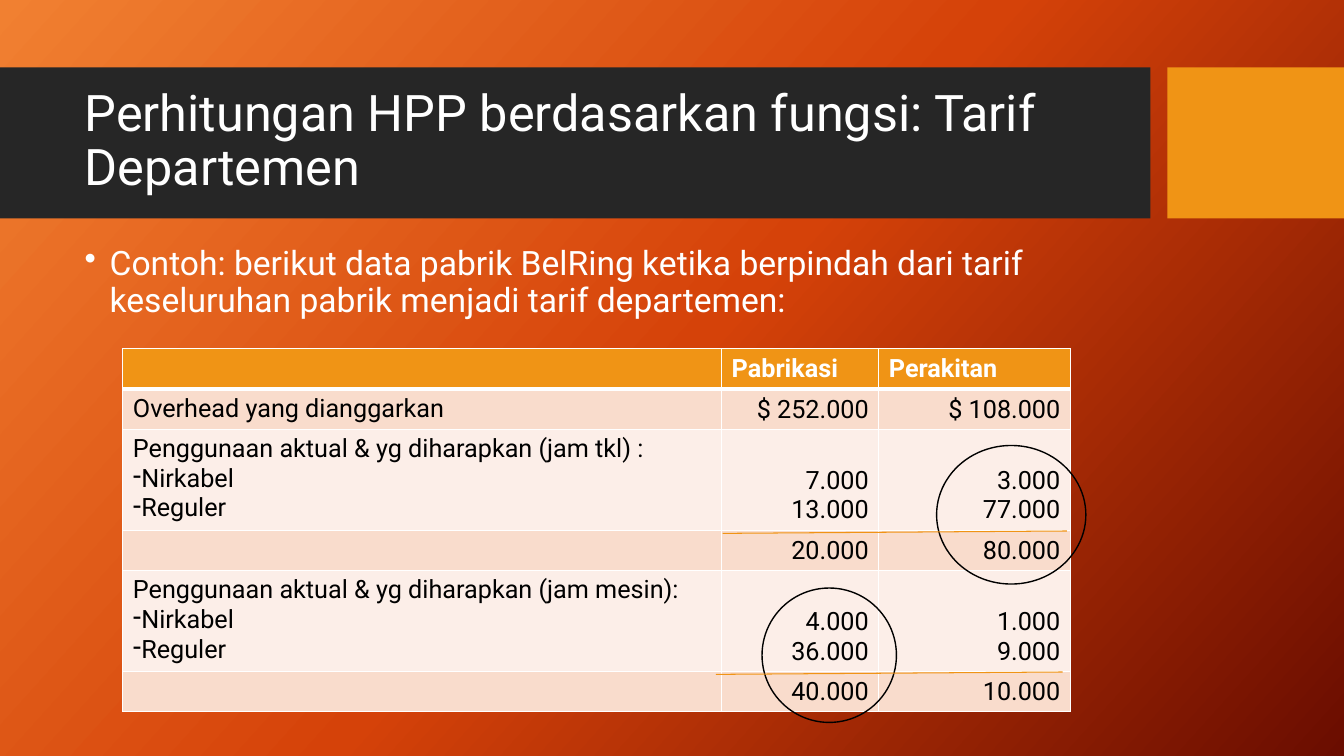
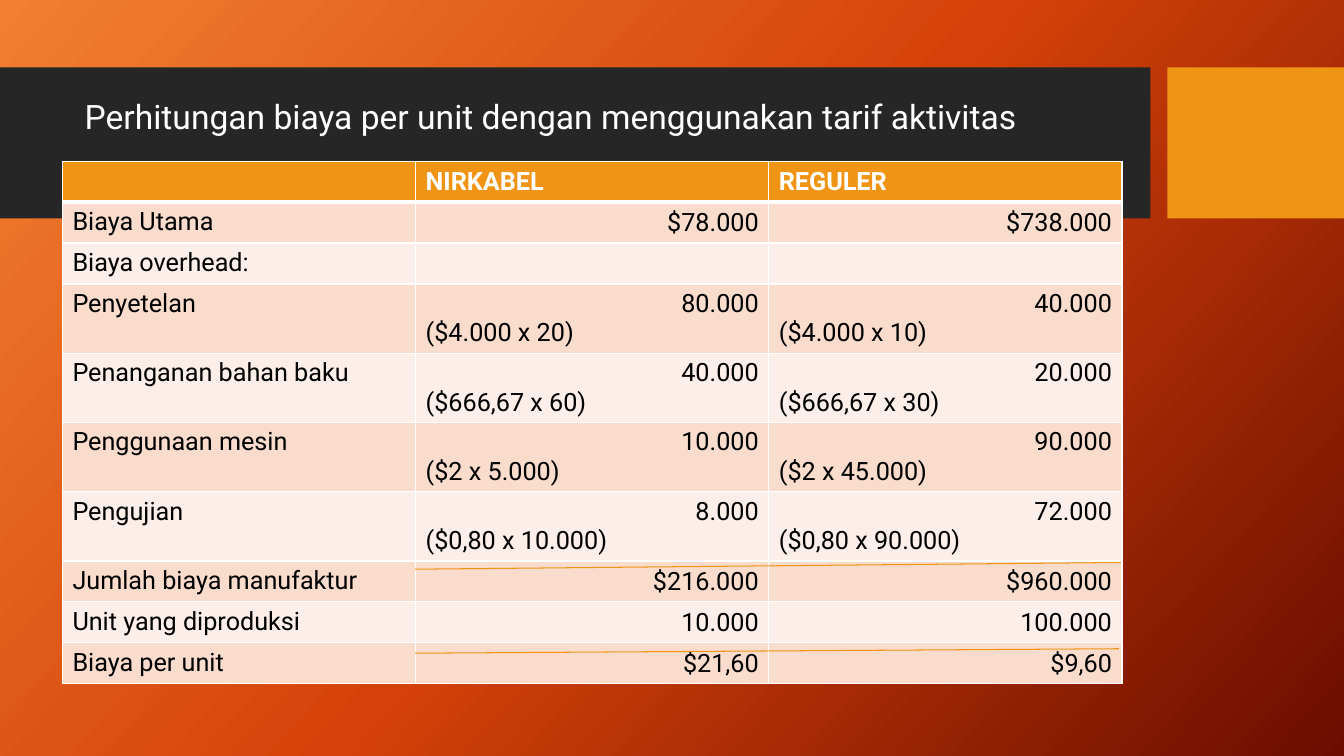
from dataclasses import dataclass
from typing import Any, NamedTuple

from lxml import etree
from pptx import Presentation
from pptx.dml.color import RGBColor
from pptx.enum.shapes import MSO_CONNECTOR as Connector, MSO_SHAPE as Shape
from pptx.enum.text import MSO_ANCHOR as Anchor, MSO_AUTO_SIZE as AutoSize, PP_ALIGN as Align
from pptx.oxml import parse_xml
from pptx.oxml.ns import nsdecls, qn
from pptx.util import Pt

# Shared look
COLORS = {
    "band": "262626", "accent": "F09415", "white": "FFFFFF", "black": "000000",
    "row_dark": "F9DCCC", "row_light": "FCEEE8",
}
BACKDROP = ((0, "F18031"), (50, "D54209"), (100, "6A0D00"))
BACKDROP_ANGLE = 42
FONT = "Roboto"
MARGIN_LEFT, TITLE_TOP, CONTENT_WIDTH = 53.3, 59, 756.7
HEADER_BORDER, CELL_BORDER = 3, 1


class Area(NamedTuple):
    left: float
    top: float
    width: float
    height: float


class Rule(NamedTuple):
    x1: float
    y1: float
    x2: float
    y2: float


@dataclass
class Grid:
    left: float
    top: float
    columns: tuple[float, ...]
    single: float  # height of a one-line row
    line: float    # added height for each further line
    rows: list[tuple[str, str, str]]


BANDS = ((Area(0, 48.2, 821.8, 107.8), "band"), (Area(833.8, 48.2, 126.2, 107.8), "accent"))

DEPARTMENTS = Grid(87.8, 249, (427.7, 112.3, 136.8), 28.2, 21.2, [
    ("", "Pabrikasi", "Perakitan"),
    ("Overhead yang dianggarkan", "$ 252.000", "$ 108.000"),
    ("Penggunaan aktual & yg diharapkan (jam tkl) :\n-Nirkabel\n-Reguler",
     "7.000\n13.000", "3.000\n77.000"),
    ("", "20.000", "80.000"),
    ("Penggunaan aktual & yg diharapkan (jam mesin):\n-Nirkabel\n-Reguler",
     "4.000\n36.000", "1.000\n9.000"),
    ("", "40.000", "10.000"),
])
CIRCLES = (Area(669, 318.2, 106.6, 99), Area(544.3, 420, 96, 96))
DEPARTMENT_RULES = (Rule(516.2, 381, 762, 379.3), Rule(511.4, 481.7, 759, 480))

ACTIVITIES = Grid(44.6, 115.2, (252.3,) * 3, 29.2, 20.2, [
    ("", "NIRKABEL", "REGULER"),
    ("Biaya Utama", "$78.000", "$738.000"),
    ("Biaya overhead:", "", ""),
    ("Penyetelan", "80.000\n($4.000 x 20)", "40.000\n($4.000 x 10)"),
    ("Penanganan bahan baku", "40.000\n($666,67 x 60)", "20.000\n($666,67 x 30)"),
    ("Penggunaan mesin", "10.000\n($2 x 5.000)", "90.000\n($2 x 45.000)"),
    ("Pengujian", "8.000\n($0,80 x 10.000)", "72.000\n($0,80 x 90.000)"),
    ("Jumlah biaya manufaktur", "$216.000", "$960.000"),
    ("Unit yang diproduksi", "10.000", "100.000"),
    ("Biaya per unit", "$21,60", "$9,60"),
])
ACTIVITY_RULES = (Rule(296.6, 406.6, 800.6, 401.8), Rule(296.6, 466.6, 799.2, 463.4))


def rgb(name: str) -> RGBColor:
    return RGBColor.from_string(COLORS[name])


def points(values: tuple) -> list:
    return [Pt(value) for value in values]


def write(para: Any, text: str, size: float, color: str, bold: bool = False) -> None:
    span = para.add_run()
    span.text = text
    for name, value in {"name": FONT, "size": Pt(size), "bold": bold}.items():
        setattr(span.font, name, value)
    span.font.color.rgb = rgb(color)


def add_bullet(para: Any, mark: str, indent: float = 0) -> None:
    props = para._p.get_or_add_pPr()
    props.set("marL", str(Pt(indent)))
    props.set("indent", str(-Pt(indent)))
    etree.SubElement(props, qn("a:buChar")).set("char", mark)


def add_figure(page: Any, kind: Any, area: Area, fill: str = "", line: str = "") -> Any:
    shape = page.shapes.add_shape(kind, *points(area))
    shape.shadow.inherit = False
    if fill:
        shape.fill.solid()
        shape.fill.fore_color.rgb = rgb(fill)
    else:
        shape.fill.background()
    if line:
        shape.line.color.rgb = rgb(line)
        shape.line.width = Pt(1)
    else:
        shape.line.fill.background()
    return shape


def add_rules(page: Any, rules: tuple[Rule, ...]) -> None:
    for rule in rules:
        line = page.shapes.add_connector(Connector.STRAIGHT, *points(rule))
        line.line.color.rgb = rgb("accent")
        line.line.width = Pt(0.75)
        etree.SubElement(line._element.spPr, qn("a:effectLst"))


def style_layout(layout: Any, page: Any) -> None:
    """Give the layout its gradient backdrop and the two title bands."""
    layout.background.fill.gradient()
    gradient = layout.element.find(".//" + qn("a:gradFill"))
    stops = "".join(f'<a:gs pos="{place * 1000}"><a:srgbClr val="{color}"/></a:gs>'
                    for place, color in BACKDROP)
    gradient.getparent().replace(gradient, parse_xml(
        f'<a:gradFill {nsdecls("a")} rotWithShape="1"><a:gsLst>{stops}</a:gsLst>'
        f'<a:lin ang="{BACKDROP_ANGLE * 60000}" scaled="0"/></a:gradFill>'))
    for area, color in BANDS:
        band = add_figure(page, Shape.RECTANGLE, area, fill=color)
        layout.shapes.element.insert(2, band.element)


def set_title(page: Any, text: str, size: float, height: float) -> None:
    title = page.shapes.title
    area = Area(MARGIN_LEFT, TITLE_TOP, CONTENT_WIDTH, height)
    for name, value in zip(area._fields, points(area)):
        setattr(title, name, value)
    frame = title.text_frame
    settings = {"word_wrap": True, "auto_size": AutoSize.NONE, "vertical_anchor": Anchor.MIDDLE}
    for name, value in settings.items():
        setattr(frame, name, value)
    para = frame.paragraphs[0]
    para.alignment, para.line_spacing = Align.LEFT, 0.9
    write(para, text, size, "white")


def add_statement(page: Any, text: str, area: Area) -> None:
    frame = page.shapes.add_textbox(*points(area)).text_frame
    frame.word_wrap = True
    para = frame.paragraphs[0]
    para.line_spacing = 0.9
    add_bullet(para, "•", 18)
    write(para, text, 24, "white")


def set_borders(cell: Any, top: float, bottom: float) -> None:
    props = cell._tc.get_or_add_tcPr()
    widths = {"lnL": CELL_BORDER, "lnR": CELL_BORDER, "lnT": top, "lnB": bottom}
    for place, (tag, width) in enumerate(widths.items()):
        props.insert(place, parse_xml(
            f'<a:{tag} {nsdecls("a")} w="{Pt(width)}"><a:solidFill>'
            f'<a:srgbClr val="{COLORS["white"]}"/></a:solidFill></a:{tag}>'))


def fill_cell(cell: Any, text: str, row: int, column: int) -> None:
    header = row == 0
    cell.fill.solid()
    cell.fill.fore_color.rgb = rgb(
        "accent" if header else "row_dark" if row % 2 else "row_light")
    set_borders(cell, HEADER_BORDER if row == 1 else CELL_BORDER,
                HEADER_BORDER if header else CELL_BORDER)
    cell.vertical_anchor = Anchor.BOTTOM if column else Anchor.TOP
    for place, line in enumerate(text.split("\n") if text else []):
        frame = cell.text_frame
        para = frame.add_paragraph() if place else frame.paragraphs[0]
        # Amounts go right; labels, headings and workings go left
        amount = column and not header and not line.startswith("(")
        para.alignment = Align.RIGHT if amount else Align.LEFT
        if line.startswith("-"):
            add_bullet(para, "-")
            line = line[1:]
        write(para, line, 18, "white" if header else "black", bold=header)


def add_grid(page: Any, grid: Grid) -> None:
    heights = [grid.single + grid.line * max(text.count("\n") for text in row)
               for row in grid.rows]
    area = Area(grid.left, grid.top, sum(grid.columns), sum(heights))
    table = page.shapes.add_table(len(grid.rows), len(grid.columns), *points(area)).table
    table.first_row = table.horz_banding = False
    for column, width in zip(table.columns, grid.columns):
        column.width = Pt(width)
    for row, (texts, height) in enumerate(zip(grid.rows, heights)):
        table.rows[row].height = Pt(height)
        for column, text in enumerate(texts):
            fill_cell(table.cell(row, column), text, row, column)


def main() -> None:
    deck = Presentation()
    deck.slide_width, deck.slide_height = Pt(960), Pt(540)
    layout = deck.slide_layouts[5]

    # Department rates
    page = deck.slides.add_slide(layout)
    style_layout(layout, page)
    set_title(page, "Perhitungan HPP berdasarkan fungsi: Tarif Departemen", 36, 85)
    add_statement(page, "Contoh: berikut data pabrik BelRing ketika berpindah dari tarif "
                  "keseluruhan pabrik menjadi tarif departemen:",
                  Area(MARGIN_LEFT, 172.8, CONTENT_WIDTH, 64))
    add_grid(page, DEPARTMENTS)
    for circle in CIRCLES:
        add_figure(page, Shape.OVAL, circle, line="black")
    add_rules(page, DEPARTMENT_RULES)

    # Unit cost with activity rates
    page = deck.slides.add_slide(layout)
    set_title(page, "Perhitungan biaya per unit dengan menggunakan tarif aktivitas", 24, 51.8)
    add_grid(page, ACTIVITIES)
    add_rules(page, ACTIVITY_RULES)

    deck.save("out.pptx")


if __name__ == "__main__":
    main()
